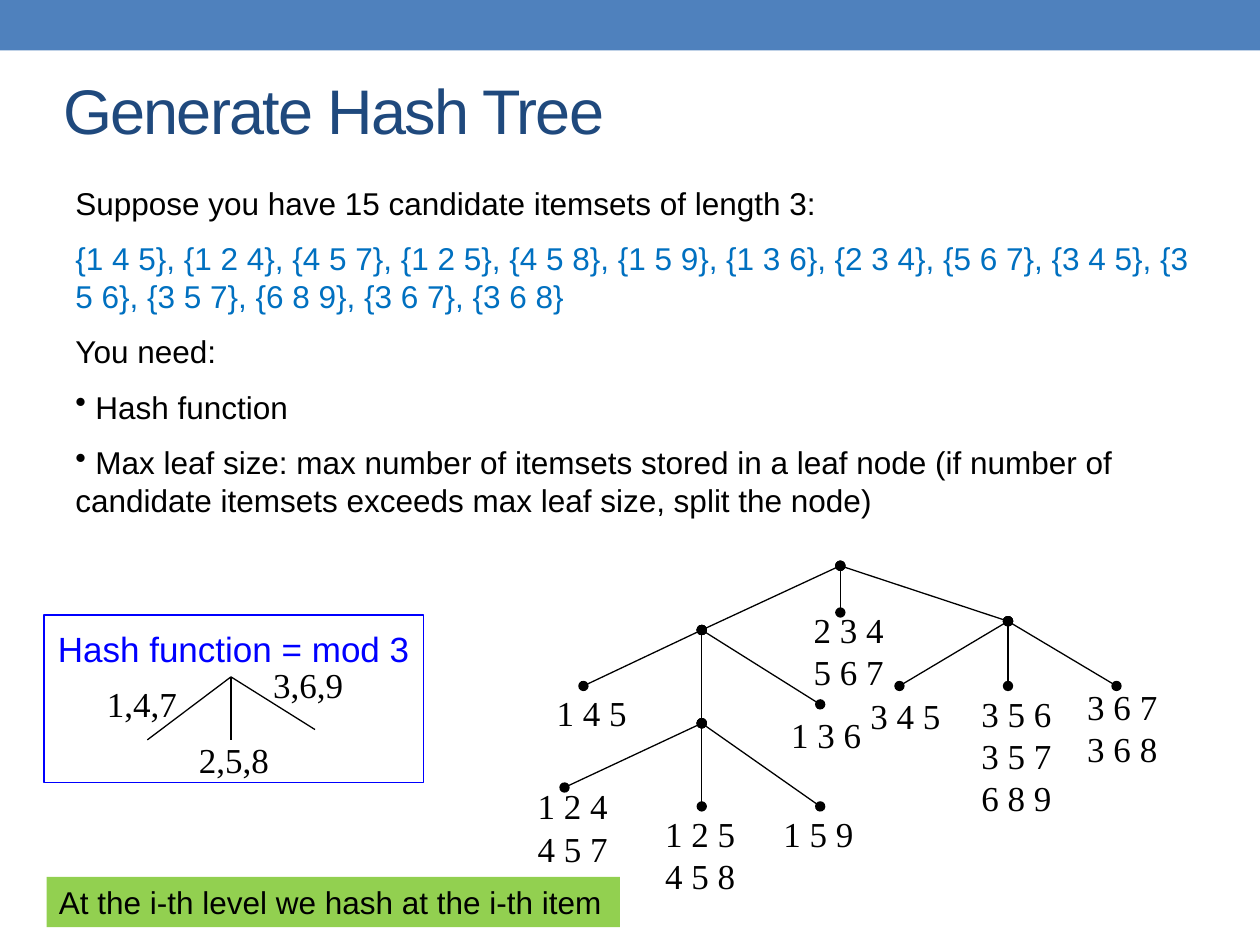
from lxml import etree
from pptx import Presentation
from pptx.dml.color import RGBColor
from pptx.enum import shapes, text
from pptx.oxml import ns
from pptx.util import Pt

BLACK = RGBColor(0x00, 0x00, 0x00)
BAND_BLUE = RGBColor(0x4F, 0x81, 0xBD)
TITLE_BLUE = RGBColor(0x1F, 0x49, 0x7D)
ITEM_BLUE = RGBColor(0x00, 0x70, 0xC0)
FRAME_BLUE = RGBColor(0x00, 0x00, 0xFF)
GREEN = RGBColor(0x92, 0xD0, 0x50)

# Content: text
TITLE = "Generate Hash Tree"
BODY = [  # words, colour, bulleted
    ("Suppose you have 15 candidate itemsets of length 3:", BLACK, False),
    ("{1 4 5}, {1 2 4}, {4 5 7}, {1 2 5}, {4 5 8}, {1 5 9}, {1 3 6}, {2 3 4}, "
     "{5 6 7}, {3 4 5}, {3 5 6}, {3 5 7}, {6 8 9}, {3 6 7}, {3 6 8}", ITEM_BLUE, False),
    ("You need:", BLACK, False),
    (" Hash function", BLACK, True),
    (" Max leaf size: max number of itemsets stored in a leaf node (if number of "
     "candidate itemsets exceeds max leaf size, split the node)", BLACK, True),
]
NOTE = "At the i-th level we hash at the i-th item"
HASH_TITLE = "Hash function = mod 3"

# Content: hash tree, as inner nodes, branches between them, and leaves
NODES = {"root": (480.2, 323.3), "left": (401, 360),
         "right": (576, 355), "low": (401, 413.3)}
BRANCHES = [("root", "left"), ("root", "right"), ("left", "low")]
LEAVES = [  # parent, dot, corner of label, itemsets
    ("root", (480.2, 350), (457.9, 344.2), ["2 3 4", "5 6 7"]),
    ("left", (333.4, 392), (311, 391.7), ["1 4 5"]),
    ("left", (468.7, 402.5), (445, 403.9), ["1 3 6"]),
    ("low", (322.6, 450), (300.2, 445), ["1 2 4", "4 5 7"]),
    ("low", (401, 460.8), (373, 460.8), ["1 2 5", "4 5 8"]),
    ("low", (468.7, 460.8), (440.6, 460.8), ["1 5 9"]),
    ("right", (514, 392), (490.3, 393.1), ["3 4 5"]),
    ("right", (576, 392), (553.7, 392.4), ["3 5 6", "3 5 7", "6 8 9"]),
    ("right", (638, 392), (614.2, 388.1), ["3 6 7", "3 6 8"]),
]

# Content: hash function, as arms from one apex
APEX = (132, 386.8)
ARMS = [  # end of arm, corner of label, items
    ((84.2, 422.8), (54, 386.6), "1,4,7"),
    ((132, 422.8), (106.6, 418.3), "2,5,8"),
    ((180, 416.9), (149, 375.8), "3,6,9"),
]
LABEL_WIDTH, LABEL_LINE, LABEL_INSETS = 54.7, 24, 7.2

ITEM = dict(name="Times New Roman", size=Pt(20))
PLAIN = dict(name="Arial", size=Pt(18))


def write(box, lines, style, color=BLACK, wrap=False, **para_values):
    """Fill a box with one paragraph for each line and return the paragraphs."""
    frame = box.text_frame
    frame.word_wrap = wrap
    frame.auto_size = text.MSO_AUTO_SIZE.NONE
    frame.text = "\n".join(lines)
    for para in frame.paragraphs:
        for name, value in ({"alignment": text.PP_ALIGN.LEFT} | para_values).items():
            setattr(para, name, value)
        for span in para.runs:
            for name, value in style.items():
                setattr(span.font, name, value)
            span.font.color.rgb = color
    return frame.paragraphs


def add_text(page, frame, lines, style, **values):
    return write(page.shapes.add_textbox(*map(Pt, frame)), lines, style, **values)


def add_label(page, corner, lines):
    height = LABEL_INSETS + LABEL_LINE * len(lines)
    add_text(page, (*corner, LABEL_WIDTH, height), lines, ITEM)


def add_rect(page, frame, fill=None, line=None):
    rect = page.shapes.add_shape(shapes.MSO_SHAPE.RECTANGLE, *map(Pt, frame))
    rect.shadow.inherit = False
    if fill is None:
        rect.fill.background()
    else:
        rect.fill.solid()
        rect.fill.fore_color.rgb = fill
    if line is None:
        rect.line.fill.background()
    else:
        rect.line.color.rgb = line
        rect.line.width = Pt(0.75)
    return rect


def add_line(page, start, end, dots=False):
    line = page.shapes.add_connector(shapes.MSO_CONNECTOR.STRAIGHT, *map(Pt, (*start, *end)))
    line.line.color.rgb = BLACK
    line.line.width = Pt(0.75)
    if dots:
        for tag in ("a:headEnd", "a:tailEnd"):
            etree.SubElement(line.line._get_or_add_ln(), ns.qn(tag), type="oval")
    etree.SubElement(line._element.spPr, ns.qn("a:effectLst"))


def main():
    deck = Presentation()
    deck.slide_width, deck.slide_height = Pt(720), Pt(540)
    page = deck.slides.add_slide(deck.slide_layouts[5])

    # Band and title
    add_rect(page, (0, 0, 720, 28.8), fill=BAND_BLUE)
    title = page.shapes.title
    title.left, title.top, title.width, title.height = map(Pt, (28.8, 41.8, 652.3, 41.8))
    title.text_frame.vertical_anchor = text.MSO_ANCHOR.MIDDLE
    heading = write(title, [TITLE], dict(name="Arial", size=Pt(36)), TITLE_BLUE, wrap=True)
    heading[0].runs[0].font._element.set("spc", "-100")

    # Hash tree
    for parent, child in BRANCHES:
        add_line(page, NODES[parent], NODES[child], dots=True)
    for parent, dot, corner, itemsets in LEAVES:
        add_line(page, NODES[parent], dot, dots=True)
        add_label(page, corner, itemsets)

    # Hash function
    for end, corner, items in ARMS:
        add_line(page, APEX, end)
        add_label(page, corner, [items])
    add_text(page, (25.2, 355, 216.7, 31.7), [HASH_TITLE], dict(name="Arial", size=Pt(20)),
             color=FRAME_BLUE, alignment=text.PP_ALIGN.CENTER)
    add_rect(page, (25.2, 351.4, 216.7, 95.8), line=FRAME_BLUE)

    # Body text
    paras = add_text(page, (36, 101.5, 653.8, 202.3), [words for words, _, _ in BODY],
                     PLAIN, wrap=True, space_before=Pt(10))
    for para, (_, color, bulleted) in zip(paras, BODY):
        para.runs[0].font.color.rgb = color
        if bulleted:
            etree.SubElement(para._p.get_or_add_pPr(), ns.qn("a:buChar"), char="•")

    # Note
    write(add_rect(page, (26.6, 501.1, 327.6, 28.8), fill=GREEN), [NOTE], PLAIN)

    deck.save("out.pptx")


if __name__ == "__main__":
    main()
